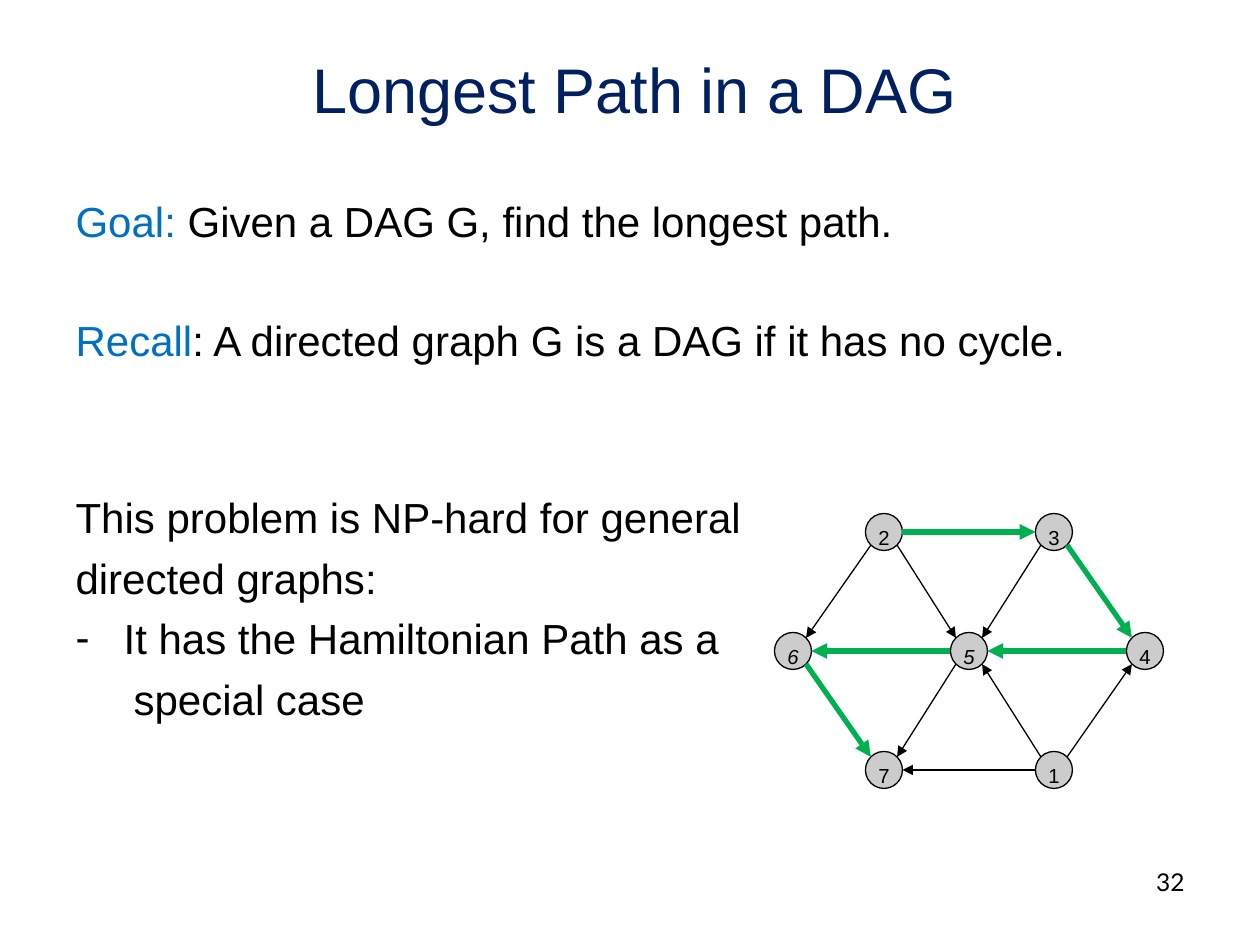
from lxml.etree import SubElement
from pptx import Presentation
from pptx.dml.color import RGBColor
from pptx.enum.shapes import MSO_CONNECTOR, MSO_SHAPE
from pptx.enum.text import MSO_ANCHOR, MSO_AUTO_SIZE, PP_ALIGN
from pptx.oxml.ns import qn
from pptx.util import Pt

TITLE = "Longest Path in a DAG"
PAGE_NUMBER = "32"
BODY = [
    {"runs": [("Goal:", "accent"), (" Given a DAG G, find the longest path.", "text")], "before": 0},
    {"runs": [("Recall", "accent"), (": A directed graph G is a DAG if it has no cycle.", "text")],
     "before": 39.2},
    {"runs": [("This problem is NP-hard for general", "text")], "before": 72.6},
    {"runs": [("directed graphs:", "text")]},
    {"runs": [("It has the Hamiltonian Path as a", "text")], "margin": 48, "bullet": "-"},
    {"runs": [("special case", "text")], "margin": 58},
]
CENTER, ROW_STEP, INNER, OUTER = (969, 651), 119, 85, 176
NODES = {
    "2": (-INNER, -1), "3": (INNER, -1),
    "6": (-OUTER, 0), "5": (0, 0), "4": (OUTER, 0),
    "7": (-INNER, 1), "1": (INNER, 1),
}
ITALIC_NODES = "65"
EDGES = ["26", "25", "14", "57", "15", "17", "35"]
LONGEST_PATH = "234567"

THEME = {
    "title": "002060", "accent": "0070C0", "text": "000000",
    "node": "CCCCCC", "path": "00B050",
    "title_size": 36, "body_size": 24, "node_size": 20, "page_size": 14,
    "font": "Arial", "page_font": "Lato",
    "edge_width": 0.75, "path_width": 3, "line_gap": 5.8,
}
EMU_PER_PX = 914400 / 126
NODE_SIZE = 37


def px(value):
    return round(value * EMU_PER_PX)


def color(role):
    return RGBColor.from_string(THEME[role])


def apply(target, values):
    for name, value in values.items():
        setattr(target, name, value)


def place(shape, left, top, width, height):
    apply(shape, {"left": px(left), "top": px(top), "width": px(width), "height": px(height)})


def add_run(paragraph, text, size, role="text", font="font", italic=False):
    run = paragraph.add_run()
    run.text = text
    apply(run.font, {"name": THEME[font], "size": Pt(THEME[size]), "italic": italic})
    run.font.color.rgb = color(role)
    return run


def fill_title(title):
    place(title, 36, 38, 1197, 157)
    apply(title.text_frame, {"word_wrap": True, "auto_size": MSO_AUTO_SIZE.NONE,
                             "vertical_anchor": MSO_ANCHOR.TOP, "margin_top": px(12)})
    heading = title.text_frame.paragraphs[0]
    heading.alignment = PP_ALIGN.CENTER
    add_run(heading, TITLE, "title_size", "title")


def fill_body(body):
    place(body, 63, 183, 1134, 661)
    frame = body.text_frame
    apply(frame, {"word_wrap": True, "auto_size": MSO_AUTO_SIZE.NONE,
                  "vertical_anchor": MSO_ANCHOR.TOP, "margin_top": px(12)})
    for index, entry in enumerate(BODY):
        line = frame.add_paragraph() if index else frame.paragraphs[0]
        properties = line._p.get_or_add_pPr()
        bullet = entry.get("bullet")
        margin = px(entry.get("margin", 0))
        properties.set("marL", str(margin))
        properties.set("indent", str(-margin if bullet else 0))
        if bullet:
            SubElement(properties, qn("a:buChar"), char=bullet)
        else:
            SubElement(properties, qn("a:buNone"))
        line.space_before = Pt(entry.get("before", THEME["line_gap"]))
        for text, role in entry["runs"]:
            add_run(line, text, "body_size", role)


def add_page_number(slide):
    frame = slide.shapes.add_textbox(px(903), px(861), px(294), px(65)).text_frame
    frame.word_wrap = True
    number = frame.paragraphs[0]
    number.alignment = PP_ALIGN.RIGHT
    add_run(number, PAGE_NUMBER, "page_size", font="page_font")


def node_center(label):
    offset, row = NODES[label]
    return CENTER[0] + offset, CENTER[1] + row * ROW_STEP


def add_node(slide, label):
    x, y = node_center(label)
    half = NODE_SIZE / 2
    node = slide.shapes.add_shape(MSO_SHAPE.OVAL, px(x - half), px(y - half),
                                  px(NODE_SIZE), px(NODE_SIZE))
    node.shadow.inherit = False
    node.fill.solid()
    node.fill.fore_color.rgb = color("node")
    node.line.color.rgb = color("text")
    node.line.width = Pt(THEME["edge_width"])
    apply(node.text_frame, {"margin_left": 0, "margin_top": 0, "margin_right": 0,
                            "margin_bottom": px(13), "word_wrap": False,
                            "vertical_anchor": MSO_ANCHOR.MIDDLE})
    caption = node.text_frame.paragraphs[0]
    caption.alignment = PP_ALIGN.CENTER
    run = add_run(caption, label, "node_size", italic=label in ITALIC_NODES)
    run._r.get_or_add_rPr().set("baseline", "-25000")


def rim_point(label, toward):
    x, y = node_center(label)
    other_x, other_y = node_center(toward)
    side = 1 if other_x > x else -1
    if y == other_y:
        return x + side * NODE_SIZE / 2, y
    reach = NODE_SIZE / 2 * 0.5 ** 0.5
    return x + side * reach, y + (reach if other_y > y else -reach)


def add_edge(slide, start, end, role, width):
    ends = (*rim_point(start, end), *rim_point(end, start))
    edge = slide.shapes.add_connector(MSO_CONNECTOR.STRAIGHT, *map(px, ends))
    edge.line.color.rgb = color(role)
    edge.line.width = Pt(THEME[width])
    SubElement(edge.line._get_or_add_ln(), qn("a:tailEnd"), type="triangle")
    SubElement(edge._element.spPr, qn("a:effectLst"))


def main():
    deck = Presentation()
    apply(deck, {"slide_width": px(1260), "slide_height": px(945)})
    slide = deck.slides.add_slide(deck.slide_layouts[1])
    fill_title(slide.shapes.title)
    fill_body(slide.placeholders[1])
    add_page_number(slide)
    for label in NODES:
        add_node(slide, label)
    for start, end in EDGES:
        add_edge(slide, start, end, "text", "edge_width")
    for start, end in zip(LONGEST_PATH, LONGEST_PATH[1:]):
        if (start, end) == ("5", "6"):
            add_edge(slide, "5", "6", "path", "path_width")
        elif (start, end) == ("4", "5"):
            add_edge(slide, "4", "5", "path", "path_width")
        else:
            add_edge(slide, start, end, "path", "path_width")
    deck.save("out.pptx")


if __name__ == "__main__":
    main()
